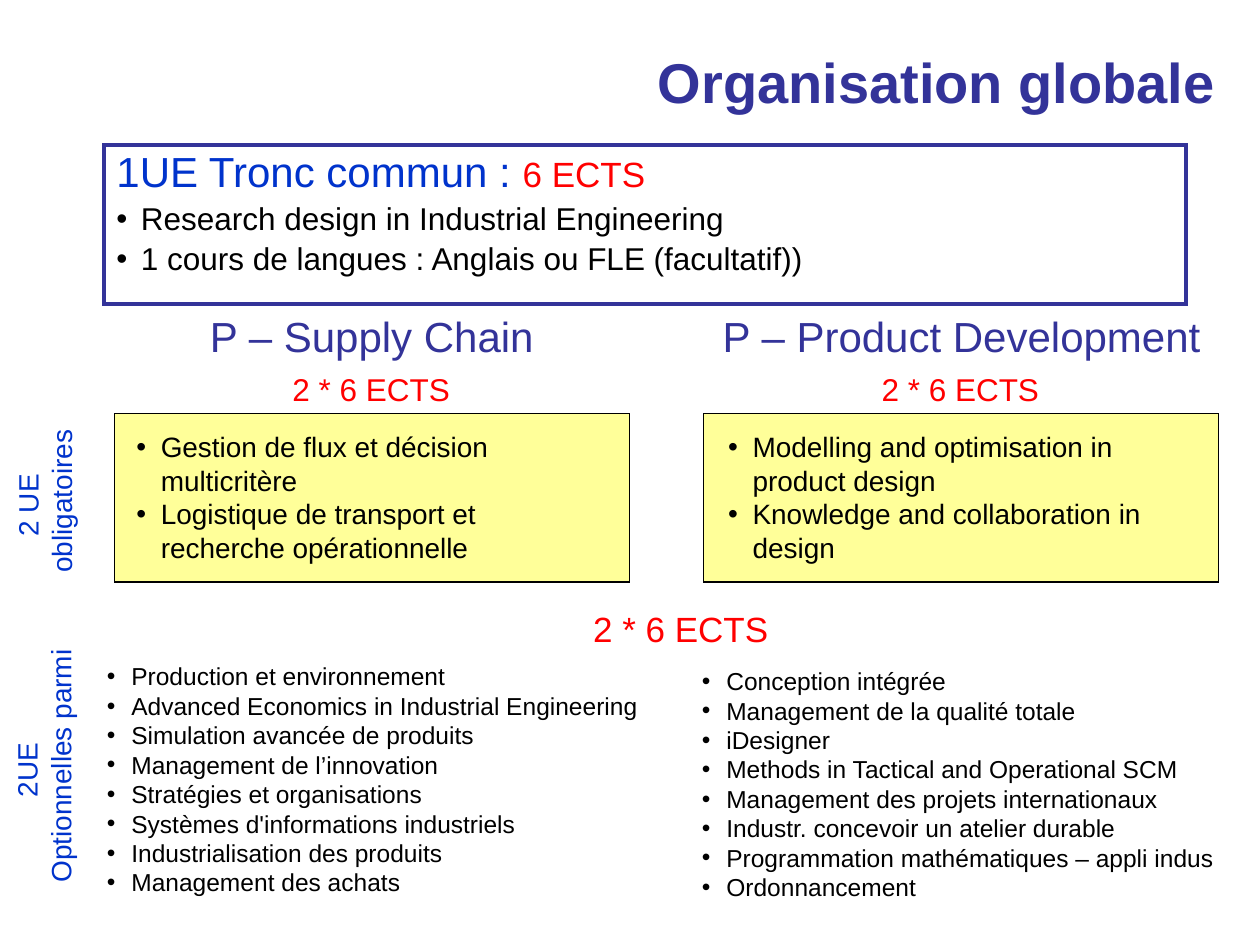
from dataclasses import dataclass

from lxml.etree import SubElement
from pptx import Presentation
from pptx.dml.color import RGBColor
from pptx.enum.shapes import MSO_SHAPE
from pptx.enum.text import MSO_ANCHOR, PP_ALIGN
from pptx.oxml.ns import qn
from pptx.util import Pt


@dataclass(frozen=True)
class Theme:
    font: str = "Arial"
    navy: str = "333399"
    blue: str = "0033CC"
    red: str = "FF0000"
    black: str = "000000"
    white: str = "FFFFFF"
    yellow: str = "FFFF99"
    title: int = 32
    heading: int = 24
    credits: int = 20
    body: int = 18
    course: int = 16
    option: int = 14
    indent: int = 14


class SlideBuilder:
    def __init__(self, slide, theme):
        self.slide = slide
        self.theme = theme

    def panel(self, left, top, width, height, fill=None, line=None, line_width=0.75):
        shape = self.slide.shapes.add_shape(
            MSO_SHAPE.RECTANGLE, Pt(left), Pt(top), Pt(width), Pt(height))
        shape.shadow.inherit = False
        if fill:
            shape.fill.solid()
            shape.fill.fore_color.rgb = RGBColor.from_string(fill)
        else:
            shape.fill.background()
        if line:
            shape.line.color.rgb = RGBColor.from_string(line)
            shape.line.width = Pt(line_width)
            outline = shape.line._get_or_add_ln()
            SubElement(outline, qn("a:miter")).set("lim", "800000")
        else:
            shape.line.fill.background()
        return self.prepare(shape)

    def text_box(self, left, top, width, height, wrap=True):
        return self.prepare(self.slide.shapes.add_textbox(
            Pt(left), Pt(top), Pt(width), Pt(height)), wrap)

    def prepare(self, shape, wrap=True):
        shape.text_frame.word_wrap = wrap
        shape.text_frame.vertical_anchor = MSO_ANCHOR.TOP
        return shape

    def paragraph(self, shape, runs, align=PP_ALIGN.LEFT, bullet=False):
        frame = shape.text_frame
        paragraph = frame.paragraphs[0]
        if paragraph.runs:
            paragraph = frame.add_paragraph()
        if bullet:
            properties = paragraph._p.get_or_add_pPr()
            properties.set("marL", str(Pt(self.theme.indent)))
            properties.set("indent", str(-Pt(self.theme.indent)))
            SubElement(properties, qn("a:buFont")).set("typeface", self.theme.font)
            SubElement(properties, qn("a:buChar")).set("char", "•")
        paragraph.alignment = align
        for text, size, color in runs:
            run = paragraph.add_run()
            run.text = text
            run.font.name = self.theme.font
            run.font.size = Pt(size)
            run.font.color.rgb = RGBColor.from_string(color)
        return paragraph

    def title(self, text, left, top, width, height):
        shape = self.text_box(left, top, width, height)
        shape.text_frame.vertical_anchor = MSO_ANCHOR.MIDDLE
        runs = [(text, self.theme.title, self.theme.navy)]
        self.paragraph(shape, runs, PP_ALIGN.RIGHT).runs[0].font.bold = True

    def label(self, text, size, color, left, top, width, height):
        shape = self.text_box(left, top, width, height, wrap=False)
        self.paragraph(shape, [(text, size, color)], PP_ALIGN.CENTER)

    def side_label(self, lines, center_x, center_y, width, height):
        shape = self.text_box(center_x - width / 2, center_y - height / 2,
                              width, height, wrap=False)
        shape.rotation = 270
        for line in lines:
            self.paragraph(shape, [(line, self.theme.course, self.theme.blue)],
                           PP_ALIGN.CENTER)

    def bullets(self, shape, items, size, anchor=MSO_ANCHOR.TOP):
        shape.text_frame.vertical_anchor = anchor
        return [self.paragraph(shape, [(item, size, self.theme.black)], bullet=True)
                for item in items]

    def common_core(self, heading, credits, courses, left, top, width, height):
        theme = self.theme
        shape = self.panel(left, top, width, height, line=theme.navy, line_width=2.25)
        first = self.paragraph(shape, [(heading, theme.heading, theme.blue),
                                       (credits, theme.credits, theme.red)])
        first.line_spacing = 0.9
        for paragraph in self.bullets(shape, courses, theme.body):
            paragraph.line_spacing = 0.9
            paragraph.space_before = Pt(3.6)

    def track(self, name, courses, left, name_left, name_width, text_left):
        theme = self.theme
        self.label(name, theme.heading, theme.navy, name_left, 173.8, name_width, 36)
        self.label("2 * 6 ECTS", theme.body, theme.red, left + 94.3, 207.7, 105, 29)
        self.panel(left, 236.2, 294.5, 96.5, theme.yellow, theme.black)
        self.bullets(self.text_box(text_left, 242, 282, 85), courses, theme.course)


def main():
    presentation = Presentation()
    presentation.slide_width, presentation.slide_height = Pt(720), Pt(540)
    theme = Theme()
    builder = SlideBuilder(
        presentation.slides.add_slide(presentation.slide_layouts[6]), theme)

    builder.title("Organisation globale", 225.7, 26, 476, 41)
    builder.common_core(
        "1UE Tronc commun : ", "6 ECTS",
        ["Research design in Industrial Engineering",
         "1 cours de langues : Anglais ou FLE (facultatif))"],
        59.5, 83, 618, 90.5)

    builder.track("P – Supply Chain",
                  ["Gestion de flux et décision multicritère",
                   "Logistique de transport et recherche opérationnelle"],
                  65.3, 104, 208 + 9, 70.8)
    builder.track("P – Product Development",
                  ["Modelling and optimisation in product design",
                   "Knowledge and collaboration in design"],
                  402, 404, 291, 409)

    builder.side_label(["2 UE ", "obligatoires"], 25.5, 286.5, 97, 46)
    builder.side_label(["2UE ", "Optionnelles parmi"], 25, 437.7, 149, 46)

    builder.label("2 * 6 ECTS", theme.credits, theme.red, 331.5, 343.5, 115, 31.5)
    builder.bullets(
        builder.text_box(54, 373.5, 368.5, 143.5),
        ["Production et environnement",
         "Advanced Economics in Industrial Engineering",
         "Simulation avancée de produits",
         "Management de l’innovation",
         "Stratégies et organisations",
         "Systèmes d'informations industriels",
         "Industrialisation des produits",
         "Management des achats"],
        theme.option, MSO_ANCHOR.MIDDLE)
    builder.bullets(
        builder.panel(394, 376.2, 316, 143.5, theme.white),
        ["Conception intégrée",
         "Management de la qualité totale",
         "iDesigner",
         "Methods in Tactical and Operational SCM",
         "Management des projets internationaux",
         "Industr. concevoir un atelier durable",
         "Programmation mathématiques – appli indus",
         "Ordonnancement"],
        theme.option, MSO_ANCHOR.MIDDLE)

    presentation.save("out.pptx")


if __name__ == "__main__":
    main()
